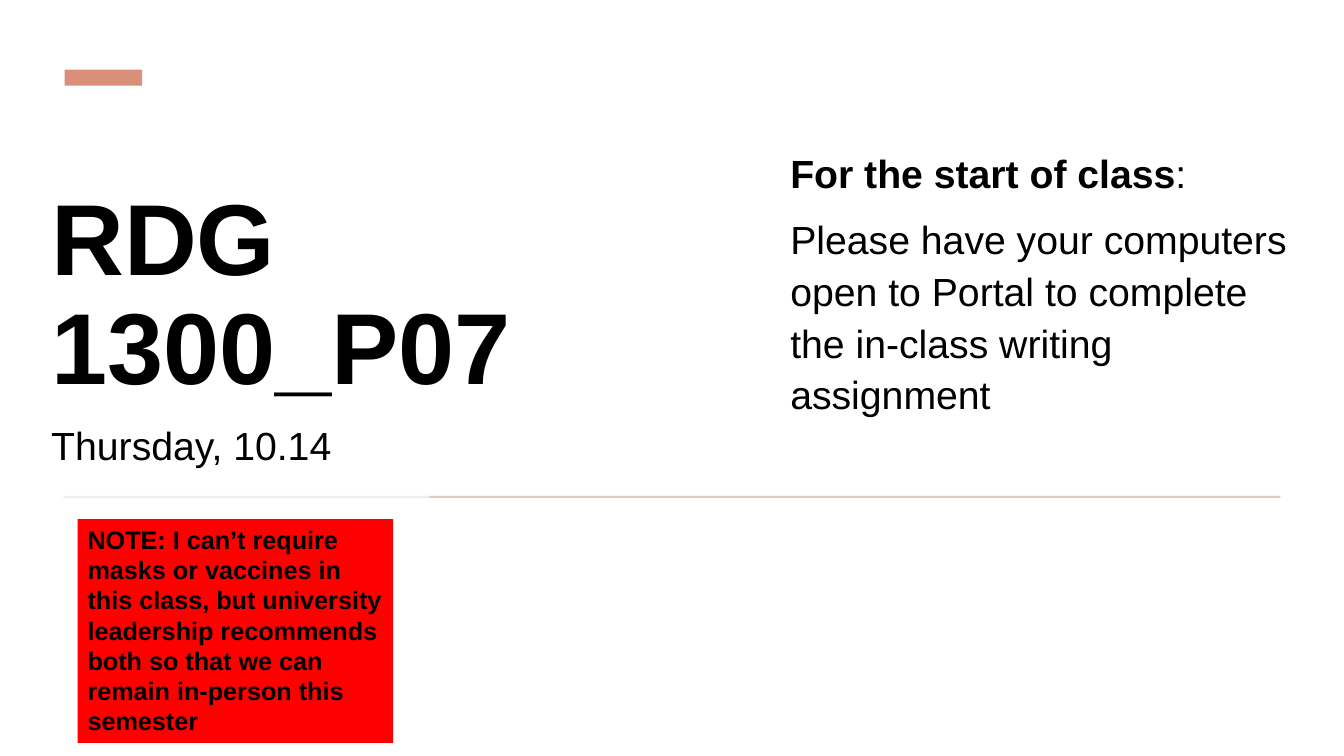
from dataclasses import dataclass

from lxml.etree import SubElement
from pptx import Presentation
from pptx.dml.color import RGBColor
from pptx.enum.shapes import MSO_SHAPE
from pptx.enum.text import MSO_ANCHOR, PP_ALIGN
from pptx.oxml.ns import qn
from pptx.util import Inches, Pt

FONT = "Arial"
BLACK, WHITE, RED = "000000", "FFFFFF", "FF0000"
CORAL, SAND = "DA8F7A", "DACFBD"


@dataclass
class Run:
    text: str
    bold: bool = False


@dataclass
class Panel:
    left: float
    top: float
    width: float
    height: float
    fill: str
    opacity: int = 100
    paragraphs: tuple[tuple[Run, ...], ...] = ()
    size: int = 28
    line_spacing: float = 1.1
    space_before: int = 10
    anchor: MSO_ANCHOR = MSO_ANCHOR.TOP


def rgb(color: str) -> RGBColor:
    return RGBColor.from_string(color)


def add_text(sp, panel: Panel) -> None:
    tf = sp.text_frame
    tf.word_wrap = True
    tf.vertical_anchor = panel.anchor
    for i, runs in enumerate(panel.paragraphs):
        p = tf.add_paragraph() if i else tf.paragraphs[0]
        p.alignment = PP_ALIGN.LEFT
        p.line_spacing = panel.line_spacing
        p.space_before = Pt(panel.space_before)
        for run in runs:
            r = p.add_run()
            r.text = run.text
            r.font.name = FONT
            r.font.size = Pt(panel.size)
            r.font.bold = run.bold
            r.font.color.rgb = rgb(BLACK)


def add_panel(s, panel: Panel) -> None:
    box = map(Inches, (panel.left, panel.top, panel.width, panel.height))
    sp = s.shapes.add_shape(MSO_SHAPE.RECTANGLE, *box)
    sp.shadow.inherit = False
    sp.line.fill.background()
    sp.fill.solid()
    sp.fill.fore_color.rgb = rgb(panel.fill)
    if panel.opacity < 100:
        color = sp.fill._xPr.find(qn("a:solidFill"))[0]
        SubElement(color, qn("a:alpha")).set("val", str(panel.opacity * 1000))
    if panel.paragraphs:
        add_text(sp, panel)


# Panels from back to front
PANELS = [
    # Accent bar and divider
    Panel(0.64, 0.69, 0.77, 0.16, CORAL),
    Panel(0.63, 4.92, 12.07, 0.02, SAND),
    # Course title
    Panel(0.41, 1.4, 5.31, 2.68, WHITE, 48, ((Run("RDG 1300_P07", True),),),
          size=72, line_spacing=0.9, space_before=0, anchor=MSO_ANCHOR.BOTTOM),
    # Date, veiling the left end of the divider
    Panel(0.41, 4.08, 3.85, 0.93, WHITE, 63, ((Run("Thursday, 10.14"),),)),
    # Health note
    Panel(0.77, 5.15, 3.13, 2.22, RED, paragraphs=((Run(
        "NOTE: I can’t require masks or vaccines in this class, but university "
        "leadership recommends both so that we can remain in-person this semester",
        True),),), size=18, line_spacing=1.0, space_before=0),
    # Start-of-class instructions
    Panel(7.74, 1.39, 5.19, 3.13, WHITE, 63, (
        (Run("For the start of class", True), Run(":")),
        (Run("Please have your computers open to Portal to complete "
             "the in-class writing assignment"),),
    )),
]


def main() -> None:
    prs = Presentation()
    prs.slide_width, prs.slide_height = Inches(13.33), Inches(7.5)
    s = prs.slides.add_slide(prs.slide_layouts[6])
    for panel in PANELS:
        add_panel(s, panel)
    prs.save("out.pptx")


if __name__ == "__main__":
    main()
